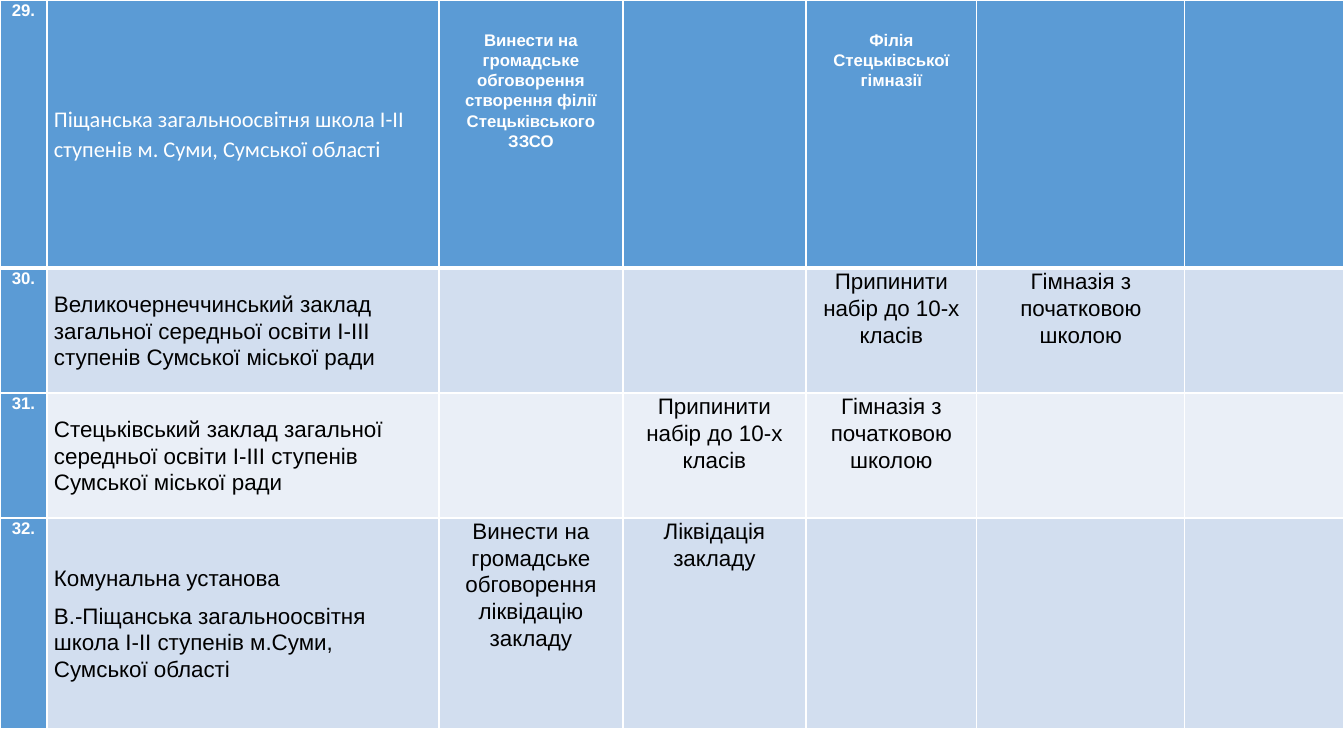
from lxml import etree
from pptx import Presentation
from pptx.dml.color import RGBColor
from pptx.enum.text import MSO_ANCHOR, PP_ALIGN
from pptx.oxml.ns import qn
from pptx.util import Emu, Pt

PX = 9071.43  # EMU per px
LEFT, CENTER = PP_ALIGN.LEFT, PP_ALIGN.CENTER
TOP, MIDDLE = MSO_ANCHOR.TOP, MSO_ANCHOR.MIDDLE
WHITE, BLACK, BLUE = "FFFFFF", "000000", "5B9BD5"
BANDS = [BLUE, "D2DEEF", "EAEFF7", "D2DEEF"]

COL_WIDTHS = [47, 392, 184, 183, 171, 208, 159]
ROW_HEIGHTS = [268, 125, 125, 211]
STOP = "Припинити набір до 10-х класів"
GYMNASIUM = "Гімназія з початковою школою"
ROWS = [
    ["29.", "Піщанська загальноосвітня школа І-ІІ ступенів м. Суми, Сумської області",
     "Винести на громадське обговорення створення філії Стецьківського ЗЗСО",
     "", "Філія Стецьківської гімназії", "", ""],
    ["30.", "Великочернеччинський заклад загальної середньої освіти І-ІІІ ступенів "
     "Сумської міської ради", "", "", STOP, GYMNASIUM, ""],
    ["31.", "Стецьківський заклад загальної середньої освіти І-ІІІ ступенів "
     "Сумської міської ради", "", STOP, GYMNASIUM, "", ""],
    ["32.", "Комунальна установа\nВ.-Піщанська загальноосвітня школа І-ІІ ступенів "
     "м.Суми, Сумської області",
     "Винести на громадське обговорення ліквідацію закладу",
     "Ліквідація закладу", "", "", ""],
]


def px(n):
    return Emu(round(n * PX))


def write(cell, text, size=16, font="Arial", color=BLACK, bold=False,
          align=CENTER, anchor=TOP, top=0):
    cell.margin_left = cell.margin_right = px(7)
    cell.margin_top, cell.margin_bottom = px(top), 0
    cell.vertical_anchor = anchor
    cell.text = text
    for p in cell.text_frame.paragraphs:
        p.alignment = align
        p.line_spacing = 1.07
        p.space_after = Pt(8)
        p.font.size = Pt(size)
        for r in p.runs:
            r.font.size, r.font.name, r.font.bold = Pt(size), font, bold
            r.font.color.rgb = RGBColor.from_string(color)


prs = Presentation()
prs.slide_width, prs.slide_height = px(1344), px(756)
s = prs.slides.add_slide(prs.slide_layouts[6])

table = s.shapes.add_table(len(ROWS), len(COL_WIDTHS), 0, 0,
                           px(sum(COL_WIDTHS)), px(sum(ROW_HEIGHTS))).table
for column, width in zip(table.columns, COL_WIDTHS):
    column.width = px(width)
for row, height in zip(table.rows, ROW_HEIGHTS):
    row.height = px(height)

for i, texts in enumerate(ROWS):
    header = i == 0
    for j, text in enumerate(texts):
        cell = table.cell(i, j)
        if j == 0:
            style = {"size": 12, "color": WHITE, "bold": True}
        elif j == 1:
            style = {"align": LEFT, "anchor": MIDDLE}
            if header:
                style.update(font="Calibri", color=WHITE)
        elif header:
            style = {"size": 12, "color": WHITE, "bold": True, "top": 30}
        else:
            style = {}
        write(cell, text, **style)

        # Borders must precede the fill in the cell properties
        tc_pr = cell._tc.get_or_add_tcPr()
        for side in "LRTB":
            thick = (i, side) in ((0, "B"), (1, "T"))
            ln = etree.SubElement(tc_pr, qn(f"a:ln{side}"), w=str(Pt(3 if thick else 1)))
            fill = etree.SubElement(ln, qn("a:solidFill"))
            etree.SubElement(fill, qn("a:srgbClr"), val=WHITE)
        cell.fill.solid()
        cell.fill.fore_color.rgb = RGBColor.from_string(BLUE if j == 0 else BANDS[i])

prs.save("out.pptx")
